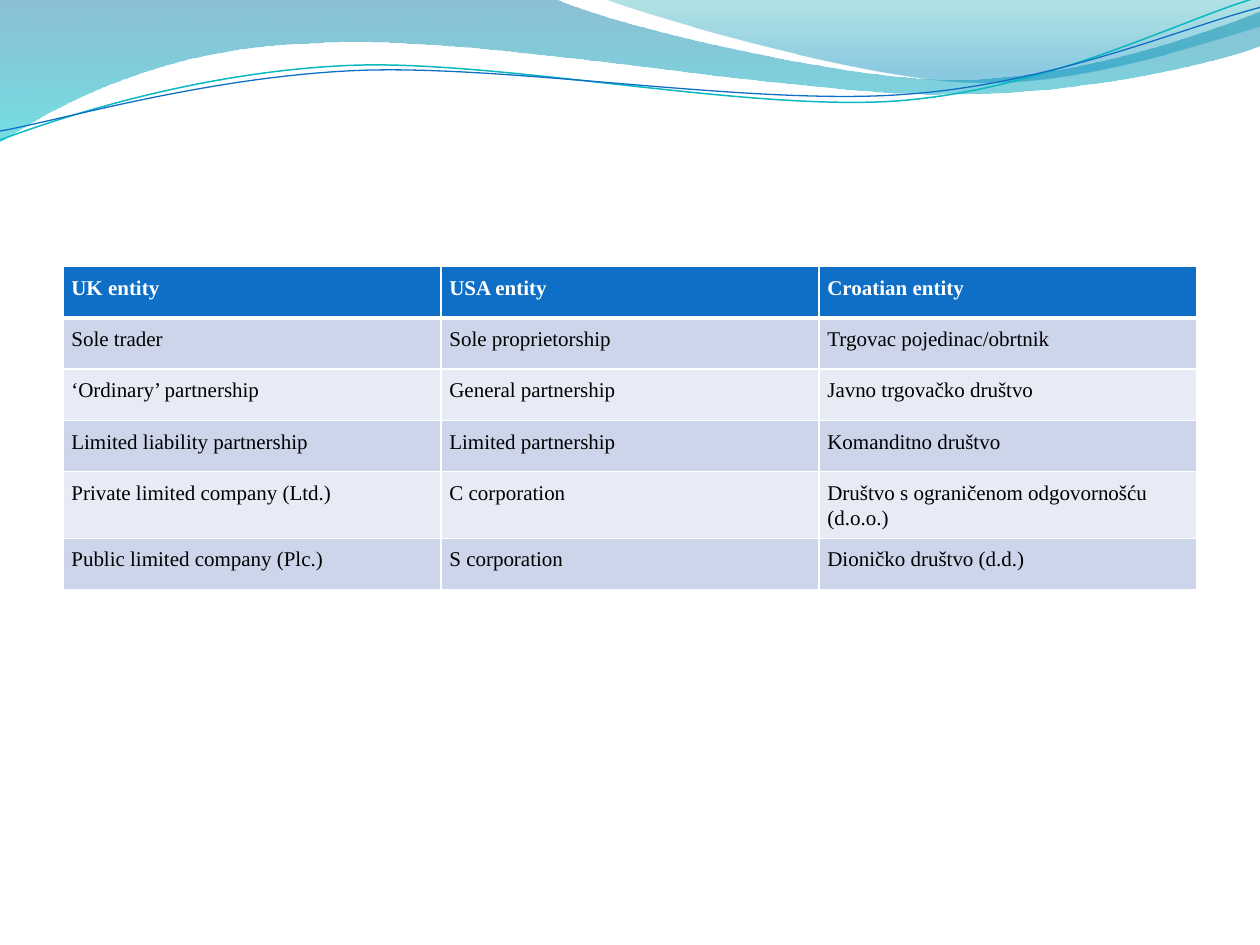
import math

import pptx
import pptx.dml.color
import pptx.oxml
import pptx.oxml.ns
import pptx.util

Pt = pptx.util.Pt
RGBColor = pptx.dml.color.RGBColor

FONT = "Times New Roman"
WHITE = RGBColor(0xFF, 0xFF, 0xFF)
BLACK = RGBColor(0x00, 0x00, 0x00)
BLUE = RGBColor(0x0F, 0x6F, 0xC6)
TEAL = RGBColor(0x0A, 0xB8, 0xBF)
BAND_DARK = RGBColor(0xCC, 0xD5, 0xEA)
BAND_LIGHT = RGBColor(0xE7, 0xEB, 0xF5)
WAVE_TOP = RGBColor(0x00, 0x74, 0xA1)
WAVE_BOTTOM = RGBColor(0x00, 0xC6, 0xCF)
CREST_TOP = RGBColor(0x00, 0xA1, 0xA9)
CREST_BOTTOM = RGBColor(0x00, 0x8B, 0xBF)

LINE_TILT = 357.3

# Each outline: a start point, then segments of one point (straight)
# or three points (cubic curve)
WAVE = [
    [(0, -0.7)],
    [(317, -0.7)],
    [(342.7, 12.2), (478, 45.4), (545.8, 45.4)],
    [(614, 45.4), (690, 18.7), (720, 6.5)],
    [(720.7, 26)],
    [(708, 31.7), (626.4, 54.7), (537, 54)],
    [(448, 54), (275, 20), (185, 24.5)],
    [(93, 26), (33, 60), (-0.7, 81.4)],
]
CREST = [
    [(345, -0.7)],
    [(366.5, 8), (491, 44.6), (553.7, 46.8)],
    [(616.3, 49.7), (692, 23), (720, 15)],
    [(720, 0)],
]
TEAL_LINE = [
    [(0, 80)],
    [(34.6, 67), (113.8, 41), (199.4, 37.4)],
    [(284.4, 33.8), (427, 64), (513.4, 57.6)],
    [(599.8, 51), (675.4, 10.8), (718.6, -1.4)],
]
BLUE_LINE = [
    [(0, 74.9)],
    [(33.8, 69), (118, 44), (203.8, 40.3)],
    [(290.2, 36.7), (429.8, 60.5), (516.2, 54)],
    [(602, 48.2), (677.5, 15), (720, 4.3)],
]

ENTITIES = [
    ("UK entity", "USA entity", "Croatian entity"),
    ("Sole trader", "Sole proprietorship", "Trgovac pojedinac/obrtnik"),
    ("‘Ordinary’ partnership", "General partnership", "Javno trgovačko društvo"),
    ("Limited liability partnership", "Limited partnership", "Komanditno društvo"),
    ("Private limited company (Ltd.)", "C corporation",
     "Društvo s ograničenom odgovornošću (d.o.o.)"),
    ("Public limited company (Plc.)", "S corporation", "Dioničko društvo (d.d.)"),
]


def turn(outline, degrees, center):
    cosine, sine = math.cos(math.radians(degrees)), math.sin(math.radians(degrees))
    center_x, center_y = center
    return [[(center_x + (x - center_x) * cosine - (y - center_y) * sine,
              center_y + (x - center_x) * sine + (y - center_y) * cosine)
             for x, y in segment] for segment in outline]


def bend_segments(shape, outline):
    """Join each three straight steps of a curve into one cubic segment."""
    steps = iter(list(shape._element.iter(pptx.oxml.ns.qn("a:lnTo"))))
    for segment in outline[1:]:
        first, *others = [next(steps) for point in segment]
        if others:
            first.tag = pptx.oxml.ns.qn("a:cubicBezTo")
            for step in others:
                first.append(step[0])
                step.getparent().remove(step)


def add_outline(slide, left, top, outline, close):
    points = [(Pt(left + x), Pt(top + y)) for segment in outline for x, y in segment]
    builder = slide.shapes.build_freeform(*points[0])
    builder.add_line_segments(points[1:], close=close)
    shape = builder.convert_to_shape()
    shape.shadow.inherit = False
    bend_segments(shape, outline)
    return shape


def add_wave(slide, left, top, outline, stops):
    shape = add_outline(slide, left, top, outline, close=True)
    shape.line.fill.background()
    shape.fill.gradient()
    shape.fill.gradient_angle = 270
    for stop, (position, color, opacity) in zip(shape.fill.gradient_stops, stops):
        stop.position = position
        stop.color.rgb = color
    # Transparency of the gradient stops
    colors = shape._element.spPr.iter(pptx.oxml.ns.qn("a:srgbClr"))
    for element, (position, color, opacity) in zip(colors, stops):
        element.append(pptx.oxml.parse_xml(
            f'<a:alpha {pptx.oxml.ns.nsdecls("a")} val="{opacity * 1000}"/>'))


def add_wave_line(slide, left, top, outline, center, color, width):
    level = turn(outline, 360 - LINE_TILT, center)
    shape = add_outline(slide, left, top, level, close=False)
    shape.rotation = LINE_TILT
    shape.fill.background()
    shape.line.color.rgb = color
    shape.line.width = Pt(width)


def add_header_waves(slide, left, top):
    add_wave(slide, left, top, WAVE, [(0, WAVE_TOP, 45), (1, WAVE_BOTTOM, 55)])
    add_wave(slide, left, top, CREST, [(0, CREST_TOP, 30), (0.8, CREST_BOTTOM, 45)])
    add_wave_line(slide, left, top, TEAL_LINE, (359.3, 41.4), TEAL, 0.85)
    add_wave_line(slide, left, top, BLUE_LINE, (359.7, 42.5), BLUE, 0.75)


def set_borders(cell, widths):
    properties = cell._tc.get_or_add_tcPr()
    for side, width in zip("LRTB", widths):
        properties.append(pptx.oxml.parse_xml(
            f'<a:ln{side} {pptx.oxml.ns.nsdecls("a")} w="{Pt(width)}">'
            f'<a:solidFill><a:srgbClr val="{WHITE}"/></a:solidFill></a:ln{side}>'))


def format_cell(cell, text, row_index):
    is_header = row_index == 0
    set_borders(cell, (1, 1, 3 if row_index == 1 else 1, 3 if is_header else 1))
    cell.fill.solid()
    cell.fill.fore_color.rgb = (BLUE if is_header else
                                BAND_DARK if row_index % 2 else BAND_LIGHT)
    cell.margin_left = cell.margin_right = Pt(4.8)
    cell.margin_top = cell.margin_bottom = Pt(4.8)
    paragraph = cell.text_frame.paragraphs[0]
    paragraph.text = text
    paragraph.line_spacing = 1.07
    paragraph.space_after = Pt(8)
    font = paragraph.runs[0].font
    font.name = FONT
    font.size = Pt(12)
    font.bold = is_header
    font.color.rgb = WHITE if is_header else BLACK


def add_entity_table(slide, left, top, width, row_height):
    frame = slide.shapes.add_table(
        len(ENTITIES), len(ENTITIES[0]), Pt(left), Pt(top), Pt(width),
        Pt(row_height * len(ENTITIES)))
    table = frame.table
    for row_index, texts in enumerate(ENTITIES):
        table.rows[row_index].height = Pt(row_height)
        for column_index, text in enumerate(texts):
            format_cell(table.cell(row_index, column_index), text, row_index)


def main():
    presentation = pptx.Presentation()
    presentation.slide_width = Pt(720)
    presentation.slide_height = Pt(540)
    slide = presentation.slides.add_slide(presentation.slide_layouts[6])
    add_header_waves(slide, left=0, top=0)
    add_entity_table(slide, left=36, top=152.4, width=648, row_height=29.3)
    presentation.save("out.pptx")


if __name__ == "__main__":
    main()
